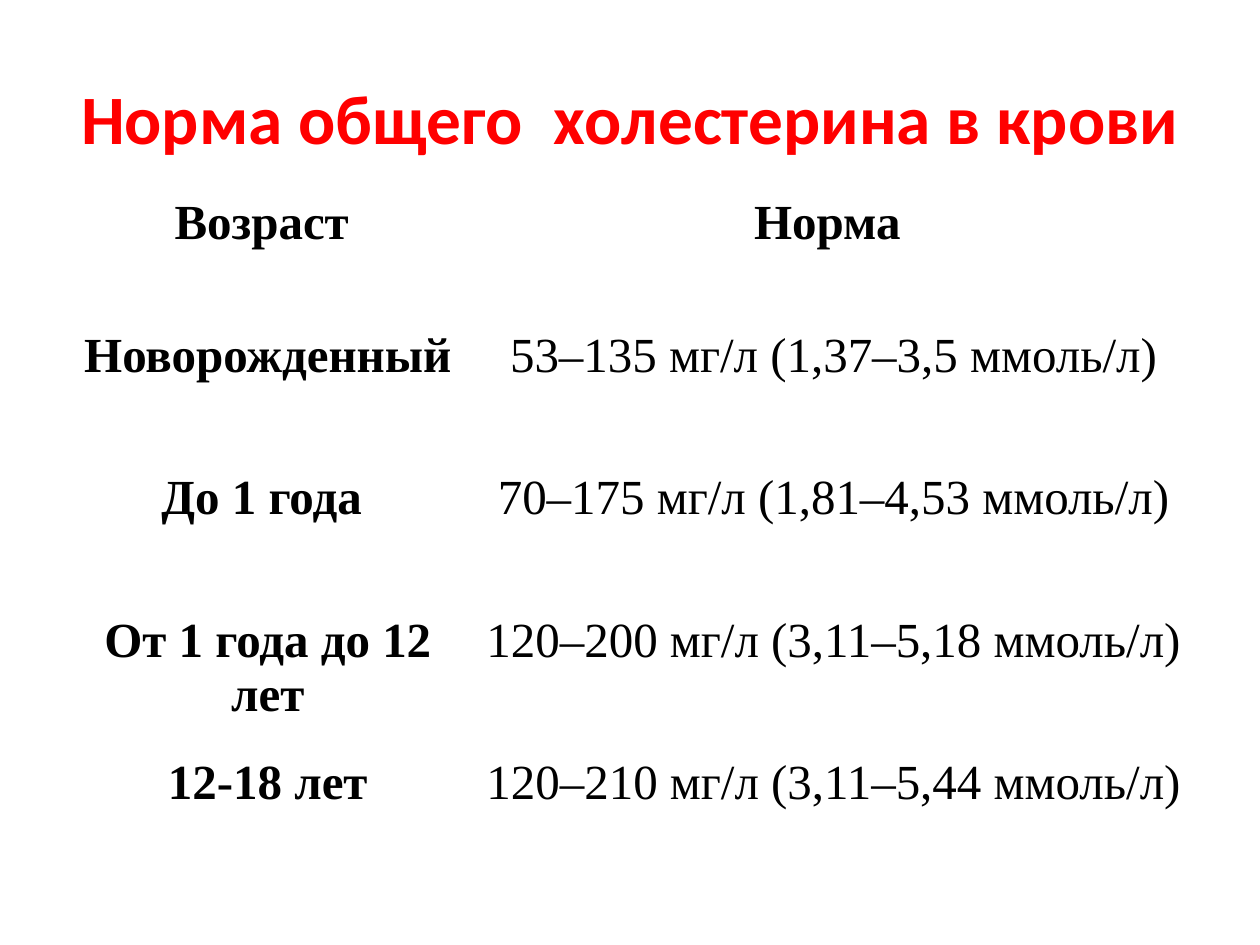
"""Build a slide with a table of normal total cholesterol by age."""
from dataclasses import dataclass

from lxml import etree
from pptx import Presentation
from pptx.dml.color import RGBColor
from pptx.enum.text import MSO_ANCHOR, PP_ALIGN
from pptx.oxml.ns import qn
from pptx.util import Emu, Pt

CENTER = PP_ALIGN.CENTER
MIDDLE = MSO_ANCHOR.MIDDLE
TOP = MSO_ANCHOR.TOP
SCALE = 9144
COLORS = {"title": "FF0000", "text": "000000", "line": "FFFFFF"}
WIDTHS = (307, 591)
HEIGHTS = (106, 113, 113, 113, 113)
SIDES = ("lnL", "lnR", "lnT", "lnB")


@dataclass(frozen=True)
class Row:
    age: str
    norm: str
    head: bool = False


ROWS = (
    Row("Возраст ", "Норма ", head=True),
    Row("Новорожденный ", "53–135 мг/л (1,37–3,5 ммоль/л)"),
    Row("До 1 года ", "70–175 мг/л (1,81–4,53 ммоль/л)"),
    Row("От 1 года до 12 лет", "120–200 мг/л (3,11–5,18 ммоль/л)"),
    Row("12-18 лет", "120–210 мг/л (3,11–5,44 ммоль/л)"),
)


def px(n: int) -> Emu:
    """Turn px into EMU."""
    return Emu(n * SCALE)


def write(frame, text: str, font: str, size: float, color: str, bold: bool) -> None:
    """Add one centred run to a text frame."""
    para = frame.paragraphs[0]
    para.alignment = CENTER
    run = para.add_run()
    run.text = text
    run.font.name = font
    run.font.size = Pt(size)
    run.font.bold = bold
    run.font.color.rgb = RGBColor.from_string(COLORS[color])


def border(cell, side: str, width: float) -> None:
    """Draw one side of a cell."""
    props = cell._tc.get_or_add_tcPr()
    line = etree.SubElement(props, qn(f"a:{side}"), w=str(Pt(width)))
    fill = etree.SubElement(line, qn("a:solidFill"))
    etree.SubElement(fill, qn("a:srgbClr"), val=COLORS["line"])


def fill_cell(cell, text: str, bold: bool, edges: dict[str, int]) -> None:
    """Format a cell and write its text."""
    cell.margin_left = cell.margin_right = px(7)
    cell.margin_top = cell.margin_bottom = px(0)
    cell.vertical_anchor = TOP
    for side in SIDES:
        border(cell, side, edges.get(side, 1))
    cell.fill.background()
    write(cell.text_frame, text, "Times New Roman", 28, "text", bold)


def add_norms(slide) -> None:
    """Add the table of norms."""
    frame = slide.shapes.add_table(
        len(ROWS), len(WIDTHS), px(59), px(155), px(sum(WIDTHS)), px(sum(HEIGHTS))
    )
    table = frame.table
    table.horz_banding = False
    table.first_row = False
    for col, width in zip(table.columns, WIDTHS):
        col.width = px(width)
    for i, (row, height) in enumerate(zip(ROWS, HEIGHTS)):
        table.rows[i].height = px(height)
        edges = {"lnB": 3} if row.head else {"lnT": 3} if i == 1 else {}
        fill_cell(table.cell(i, 0), row.age, True, edges)
        fill_cell(table.cell(i, 1), row.norm, row.head, edges)


def main() -> None:
    """Build and save the deck."""
    deck = Presentation()
    deck.slide_width, deck.slide_height = px(1000), px(750)
    slide = deck.slides.add_slide(deck.slide_layouts[5])
    title = slide.shapes.title
    title.left, title.top = px(50), px(30)
    title.width, title.height = px(900), px(125)
    title.text_frame.vertical_anchor = MIDDLE
    write(title.text_frame, "Норма общего  холестерина в крови", "Calibri", 39.6, "title", True)
    add_norms(slide)
    deck.save("out.pptx")


if __name__ == "__main__":
    main()
